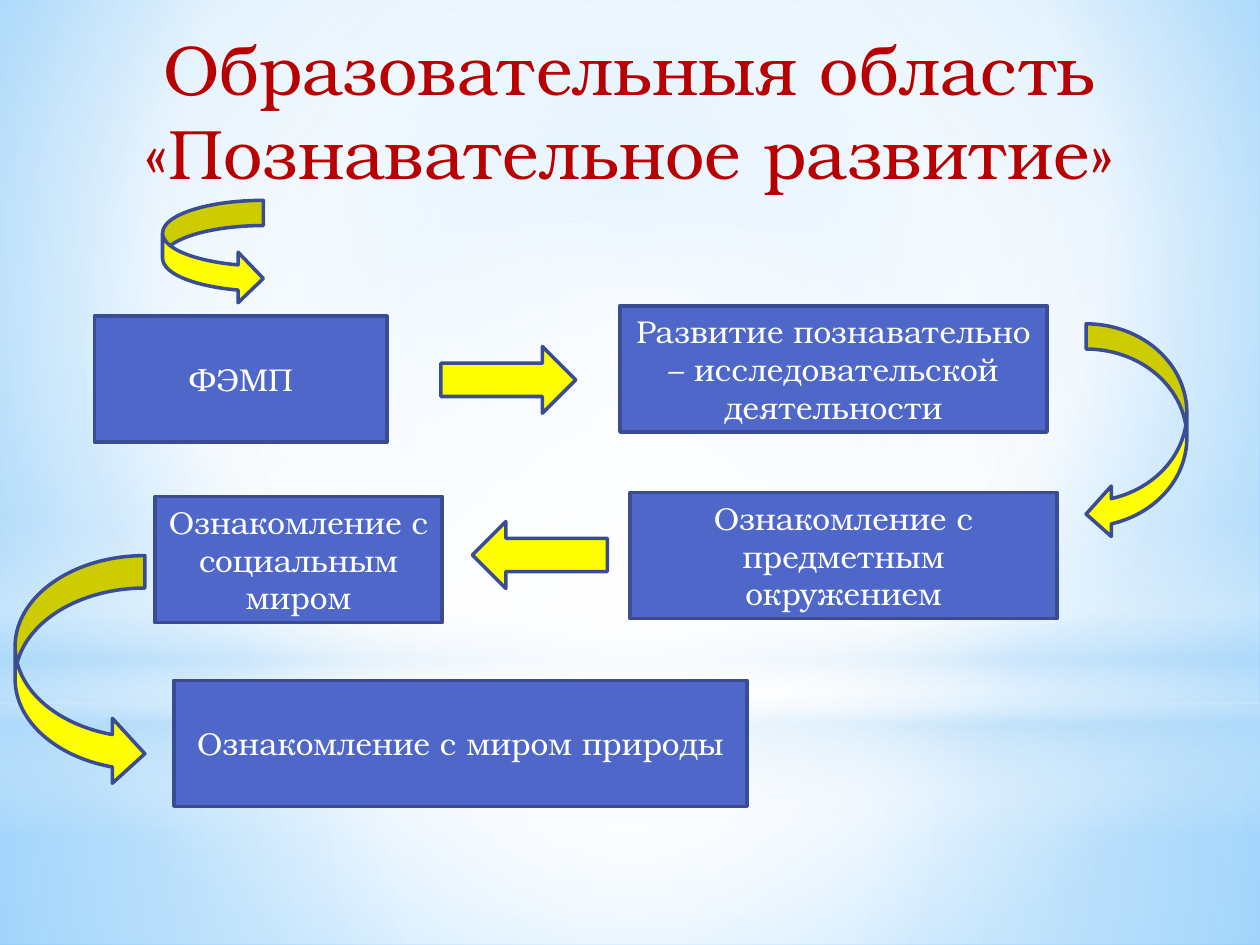
from lxml import etree
from pptx import Presentation
from pptx.dml.color import RGBColor
from pptx.enum import shapes, text
from pptx.oxml import ns
from pptx.util import Inches, Pt

FONT = "TeX Gyre Bonum"
COLORS = {
    "title": "B80000", "topic": "4E67C8", "arrow": "FFFF00",
    "outline": "3A4C94", "topic_text": "FFFFFF",
    "white": "FFFFFF", "haze": "B4DCFA", "sky": "9ED5FF", "deep_sky": "5BB9FF",
}
KIND = shapes.MSO_SHAPE
CENTER = (50, 50, 50, 50)

TITLE = "Образовательныя область «Познавательное развитие»"
TITLE_AREA = (0.43, 0.15, 9.13, 1.45)
TOPIC_HEIGHT = 1
TOPICS = [
    ("ФЭМП", 0.75, 2.51, 2.32),
    ("Развитие познавательно – исследовательской деятельности", 4.92, 2.43, 3.39),
    ("Ознакомление с предметным окружением", 5, 3.91, 3.39),
    ("Ознакомление с социальным миром", 1.23, 3.94, 2.28),
    ("Ознакомление с миром природы", 1.38, 5.4, 4.55),
]
ARROWS = [
    (KIND.CURVED_RIGHT_ARROW, (1.29, 1.59, 0.8, 0.82)),
    (KIND.RIGHT_ARROW, (3.5, 2.75, 1.07, 0.53)),
    (KIND.CURVED_LEFT_ARROW, (8.62, 2.57, 0.8, 1.71)),
    (KIND.LEFT_ARROW, (3.75, 4.14, 1.07, 0.53)),
    (KIND.CURVED_RIGHT_ARROW, (0.12, 4.41, 1.03, 1.83)),
]
SKY_STOPS = [(0, "sky", 100), (60, "white", 100), (100, "deep_sky", 100)]
SKY_FOCUS = (20, 10, 20, 60)
GLOWS = [
    (KIND.RECTANGLE, (0, 5.58, 10, 1.92), CENTER,
     [(0, "white", 91), (37, "white", 76), (100, "haze", 79)]),
    (KIND.RECTANGLE, (0, 0, 10, 5.58), CENTER,
     [(0, "white", 89), (48, "white", 62), (100, "haze", 79)]),
    (KIND.RECTANGLE, (0, 4.12, 10, 2.5), None,
     [(0, "white", 0), (29, "white", 30), (45, "haze", 40),
      (55, "white", 26), (65, "haze", 60), (100, "white", 0)]),
    (KIND.OVAL, (0, 1.75, 10, 5.58), CENTER,
     [(0, "white", 100), (56, "white", 0)]),
]


def rgb(name):
    return RGBColor.from_string(COLORS[name])


def add(parent, tag, **attributes):
    values = {key: str(value) for key, value in attributes.items()}
    return etree.SubElement(parent, ns.qn(tag), values)


def set_gradient(fill, owner, stops, focus):
    fill.solid()
    fill.fore_color.rgb = rgb("white")
    solid = next(owner.iter(ns.qn("a:solidFill")))
    gradient = etree.Element(ns.qn("a:gradFill"), {"rotWithShape": "1"})
    stop_list = add(gradient, "a:gsLst")
    for position, color, opacity in stops:
        stop = add(stop_list, "a:gs", pos=position * 1000)
        shade = add(stop, "a:srgbClr", val=COLORS[color])
        if opacity < 100:
            add(shade, "a:alpha", val=opacity * 1000)
    if focus:
        radial = add(gradient, "a:path", path="circle")
        add(radial, "a:fillToRect",
            **{side: value * 1000 for side, value in zip("ltrb", focus)})
    else:
        add(gradient, "a:lin", ang=90 * 60000, scaled=0)
    solid.getparent().replace(solid, gradient)


def add_figure(slide, kind, area):
    figure = slide.shapes.add_shape(kind, *map(Inches, area))
    figure.shadow.inherit = False
    return figure


def add_outlined(slide, kind, area, color):
    figure = add_figure(slide, kind, area)
    figure.fill.solid()
    figure.fill.fore_color.rgb = rgb(color)
    figure.line.color.rgb = rgb("outline")
    figure.line.width = Pt(2)
    return figure


def write(frame, words, size, color):
    frame.word_wrap = True
    paragraph = frame.paragraphs[0]
    paragraph.alignment = text.PP_ALIGN.CENTER
    run = paragraph.add_run()
    run.text = words
    run.font.name = FONT
    run.font.size = Pt(size)
    run.font.color.rgb = rgb(color)


def main():
    deck = Presentation()
    deck.slide_width, deck.slide_height = Inches(10), Inches(7.5)
    slide = deck.slides.add_slide(deck.slide_layouts[6])

    set_gradient(slide.background.fill, slide.element, SKY_STOPS, SKY_FOCUS)
    for kind, area, focus, stops in GLOWS:
        glow = add_figure(slide, kind, area)
        glow.line.fill.background()
        set_gradient(glow.fill, glow.element, stops, focus)

    title = slide.shapes.add_textbox(*map(Inches, TITLE_AREA))
    write(title.text_frame, TITLE, 40, "title")
    title.text_frame.auto_size = text.MSO_AUTO_SIZE.SHAPE_TO_FIT_TEXT

    for words, left, top, width in TOPICS:
        area = (left, top, width, TOPIC_HEIGHT)
        topic = add_outlined(slide, KIND.RECTANGLE, area, "topic")
        topic.text_frame.vertical_anchor = text.MSO_ANCHOR.MIDDLE
        write(topic.text_frame, words, 18, "topic_text")

    for kind, area in ARROWS:
        add_outlined(slide, kind, area, "arrow")

    deck.save("out.pptx")


if __name__ == "__main__":
    main()
